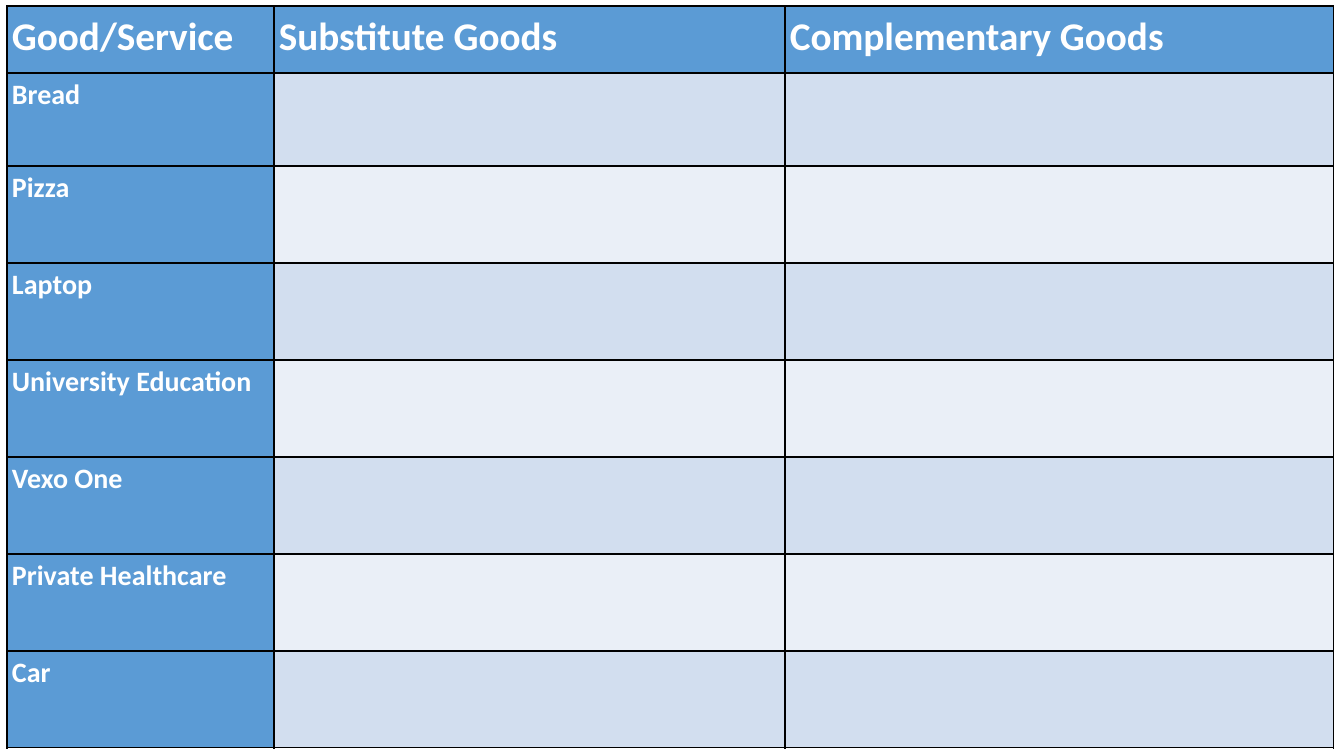
from lxml.etree import SubElement
from pptx import Presentation
from pptx.dml.color import RGBColor
from pptx.oxml.ns import qn
from pptx.util import Pt

HUES = {"head": "5B9BD5", "odd": "D2DEEF", "even": "EAEFF7",
        "text": "FFFFFF", "line": "000000"}
HEADS = ["Good/Service", "Substitute Goods", "Complementary Goods"]
GOODS = ["Bread", "Pizza", "Laptop", "University Education", "Vexo One",
         "Private Healthcare", "Car"]
COLS = [267, 511, 549]
ROWS = [67, 93] + [97] * 6


def px(count):
    """Turn pixels into EMU."""
    return round(count * 914400 / 100.8)


def border(cell):
    """Draw a thin line on each side of a cell."""
    props = cell._tc.get_or_add_tcPr()
    for side in ("a:lnL", "a:lnR", "a:lnT", "a:lnB"):
        line = SubElement(props, qn(side), w=str(Pt(1)))
        fill = SubElement(line, qn("a:solidFill"))
        SubElement(fill, qn("a:srgbClr"), val=HUES["line"])


def write(cell, text, size):
    """Put one bold label into a cell."""
    para = cell.text_frame.paragraphs[0]
    para.line_spacing = 1.15
    run = para.add_run()
    run.text = text
    run.font.name = "Calibri"
    run.font.size = Pt(size)
    run.font.bold = True
    run.font.color.rgb = RGBColor.from_string(HUES["text"])


def grid(slide, left, top):
    """Build the table of goods with its corner at the given place."""
    frame = slide.shapes.add_table(len(ROWS), len(COLS), px(left), px(top),
                                   px(sum(COLS)), px(sum(ROWS)))
    table = frame.table
    for col, width in zip(table.columns, COLS):
        col.width = px(width)
    for row, height in zip(table.rows, ROWS):
        row.height = px(height)
    labels = [HEADS] + [[good, "", ""] for good in GOODS]
    for r, line in enumerate(labels):
        for c, text in enumerate(line):
            cell = table.cell(r, c)
            cell.margin_left = cell.margin_right = px(5)
            cell.margin_top = cell.margin_bottom = 0
            border(cell)
            band = "odd" if r % 2 else "even"
            hue = HUES["head" if text else band]
            cell.fill.solid()
            cell.fill.fore_color.rgb = RGBColor.from_string(hue)
            if text:
                write(cell, text, 20 if r else 28)


def main():
    """Make the slide and save it."""
    deck = Presentation()
    deck.slide_width, deck.slide_height = px(1344), px(756)
    slide = deck.slides.add_slide(deck.slide_layouts[6])
    grid(slide, 7, 6)
    deck.save("out.pptx")


if __name__ == "__main__":
    main()
